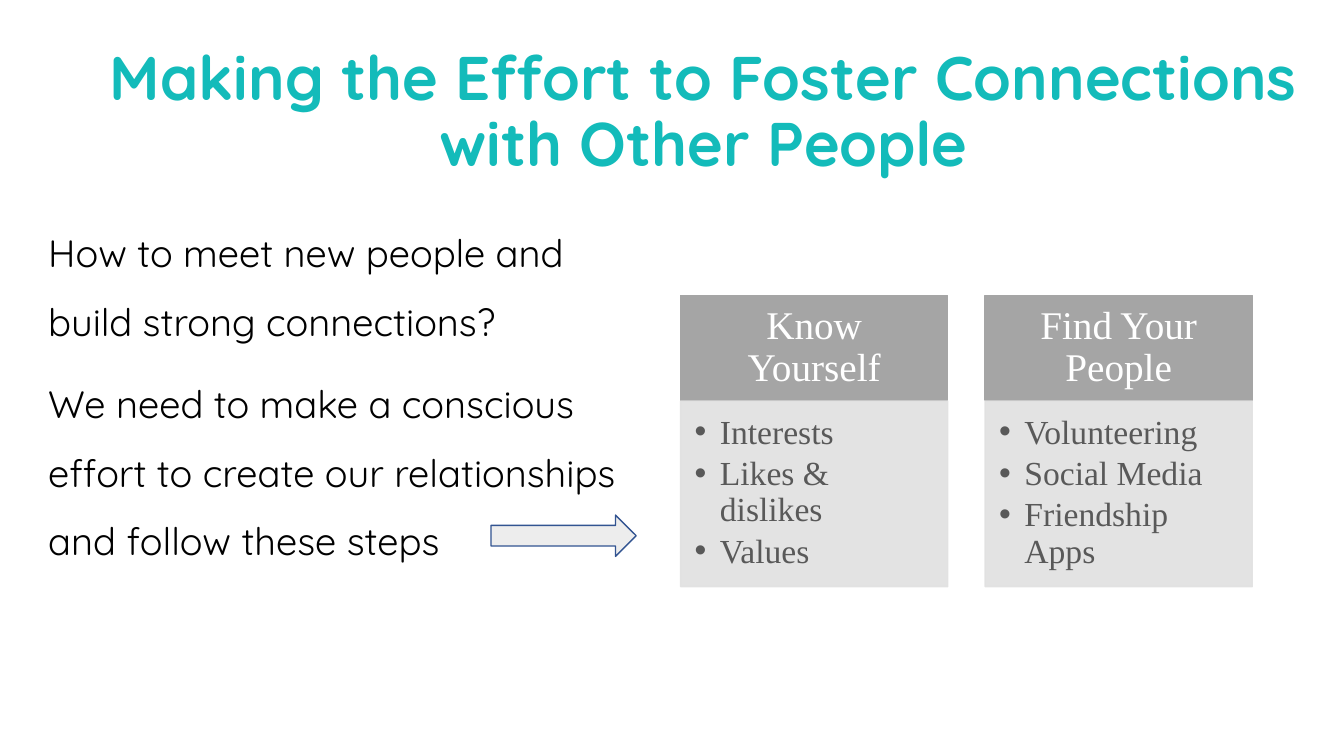
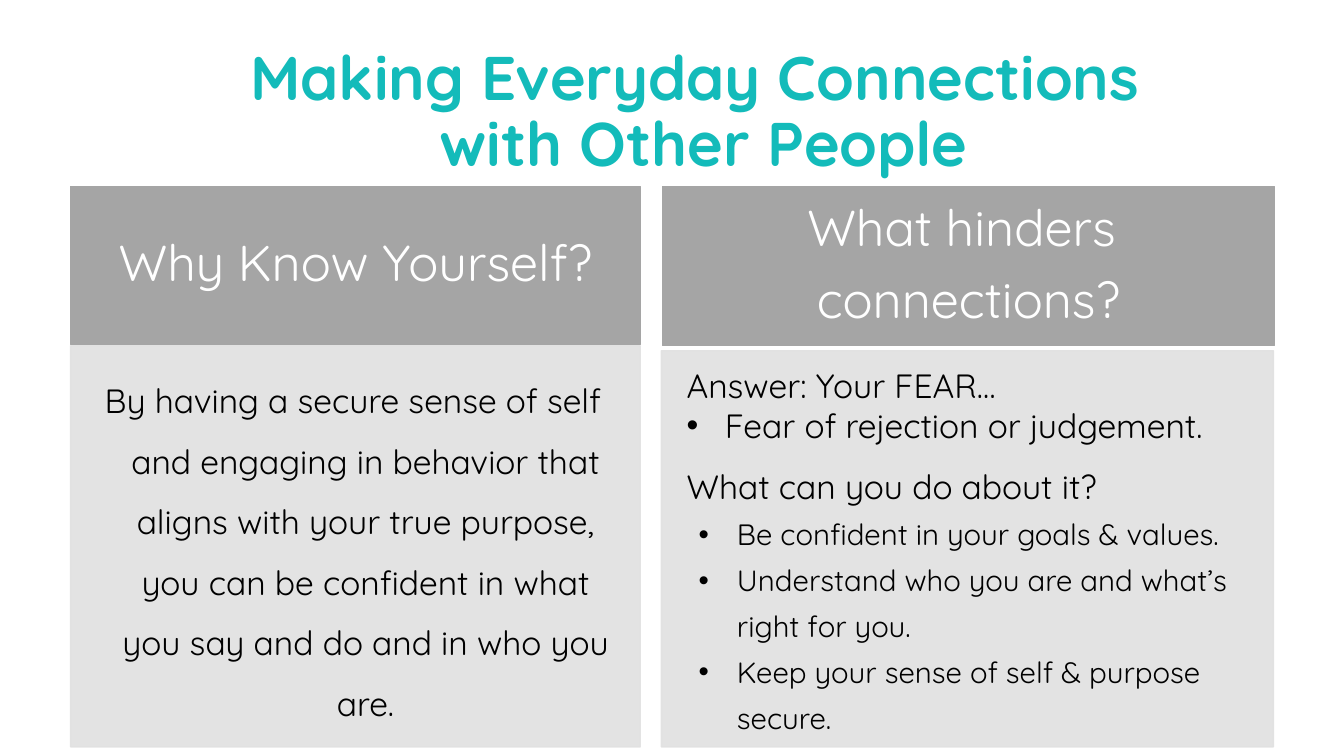
from dataclasses import dataclass, replace

from lxml import etree
from pptx import Presentation
from pptx.dml.color import RGBColor
from pptx.enum import shapes, text
from pptx.oxml.ns import qn
from pptx.util import Pt

PX = 9144
TEAL = RGBColor(0x13, 0xBB, 0xBA)
BLACK = RGBColor(0x00, 0x00, 0x00)
WHITE = RGBColor(0xFF, 0xFF, 0xFF)
HEADER_GREY = RGBColor(0xA5, 0xA5, 0xA5)
BODY_GREY = RGBColor(0xE1, 0xE1, 0xE1)
ARROW_GREY = RGBColor(0xED, 0xED, 0xED)
ARROW_BLUE = RGBColor(0x32, 0x54, 0x91)
TEXT_GREY = RGBColor(0x59, 0x59, 0x59)
LEFT, CENTER = text.PP_ALIGN.LEFT, text.PP_ALIGN.CENTER
TOP, MIDDLE = text.MSO_ANCHOR.TOP, text.MSO_ANCHOR.MIDDLE
SERIF = "Times New Roman"


@dataclass(frozen=True)
class Style:
    """Look of one paragraph; margin and indent in px, the rest in points."""
    size: float
    color: RGBColor = BLACK
    font: str = "Quicksand"
    bold: bool = False
    align: text.PP_ALIGN = LEFT
    spacing: float = 1.0
    before: float = 0
    after: float = 0
    margin: int = 0
    indent: int = 0
    bullet: bool = False


TITLE = Style(44, TEAL, bold=True, align=CENTER, spacing=0.9)
INTRO = Style(27.2, spacing=1.5, before=10)
HEADER = Style(36, WHITE, align=CENTER, spacing=0.9)
STEP_HEADER = replace(HEADER, size=28, font=SERIF)
STEP = Style(24, TEXT_GREY, SERIF, spacing=0.9, after=3.6, margin=25, indent=-25, bullet=True)
REASON = Style(24, align=CENTER, spacing=1.5, margin=25, indent=-25)
ANSWER = Style(24)
FEAR = replace(ANSWER, margin=38, indent=-38, bullet=True)
QUESTION = replace(ANSWER, before=14.4)
ADVICE = replace(FEAR, size=21, spacing=1.3, margin=50)


def px(*lengths):
    """Turn px lengths into EMU."""
    return [length * PX for length in lengths]


def write(frame, lines, anchor=TOP, insets=(10, 5, 10, 5)):
    """Fill a text frame with (wording, style) paragraphs."""
    frame.word_wrap = True
    frame.vertical_anchor = anchor
    frame.margin_left, frame.margin_top, frame.margin_right, frame.margin_bottom = px(*insets)
    for index, (wording, style) in enumerate(lines):
        paragraph = frame.add_paragraph() if index else frame.paragraphs[0]
        paragraph.text = wording
        properties = paragraph._p.get_or_add_pPr()
        properties.set("marL", str(style.margin * PX))
        properties.set("indent", str(style.indent * PX))
        if style.bullet:
            etree.SubElement(properties, qn("a:buFont"), typeface="Arial")
            etree.SubElement(properties, qn("a:buChar"), char="•")
        paragraph.alignment = style.align
        paragraph.line_spacing = style.spacing
        paragraph.space_before = Pt(style.before)
        paragraph.space_after = Pt(style.after)
        font = paragraph.font
        font.name, font.size, font.bold = style.font, Pt(style.size), style.bold
        font.color.rgb = style.color


def add_text(slide, box, lines, anchor=TOP):
    """Add a plain text box."""
    write(slide.shapes.add_textbox(*px(*box)).text_frame, lines, anchor)


def add_block(slide, kind, box, fill, line, alpha=100):
    """Add a filled preset shape with a thin outline."""
    block = slide.shapes.add_shape(kind, *px(*box))
    block.shadow.inherit = False
    block.fill.solid()
    block.fill.fore_color.rgb = fill
    block.line.color.rgb = line
    block.line.width = Pt(1)
    if alpha < 100:
        for color in block._element.spPr.iter(qn("a:srgbClr")):
            etree.SubElement(color, qn("a:alpha"), val=str(alpha * 1000))
    return block


def add_panel(slide, header_box, header, body_box, body, body_inset=14):
    """Add a dark header block above a pale body block."""
    rectangle = shapes.MSO_SHAPE.RECTANGLE
    head = add_block(slide, rectangle, header_box, HEADER_GREY, HEADER_GREY)
    write(head.text_frame, header, MIDDLE, (22, 12, 22, 12))
    base = add_block(slide, rectangle, body_box, BODY_GREY, BODY_GREY, alpha=90)
    write(base.text_frame, body, TOP, (body_inset, 14, 19, 21))


def add_titled_slide(deck, title):
    """Add a blank slide with the shared title."""
    slide = deck.slides.add_slide(deck.slide_layouts[6])
    add_text(slide, (92, 40, 1212, 145), [(title, TITLE)], MIDDLE)
    return slide


def build_steps(deck):
    """Build the slide on meeting people in two steps."""
    slide = add_titled_slide(deck, "Making the Effort to Foster Connections with Other People")
    add_text(slide, (38, 200, 620, 430), [
        ("How to meet new people and build strong connections?", INTRO),
        ("We need to make a conscious effort to create our relationships "
         "and follow these steps", INTRO),
    ])
    steps = [
        ("Know Yourself", ["Interests", "Likes & dislikes", "Values"]),
        ("Find Your People", ["Volunteering", "Social Media", "Friendship Apps"]),
    ]
    for index, (header, items) in enumerate(steps):
        left = 675 + index * 302
        add_panel(slide, (left, 293, 265, 104), [(header, STEP_HEADER)],
                  (left, 398, 265, 184), [(item, STEP) for item in items])
    add_block(slide, shapes.MSO_SHAPE.RIGHT_ARROW, (487, 511, 144, 41), ARROW_GREY, ARROW_BLUE)


def build_everyday(deck):
    """Build the slide on self-knowledge and what hinders connections."""
    slide = add_titled_slide(deck, "Making Everyday Connections \vwith Other People")
    add_panel(slide, (70, 185, 565, 157), [("Why Know Yourself?", HEADER)],
              (70, 343, 565, 398), [
        ("By having a secure sense of self and engaging in behavior that aligns with your "
         "true purpose, you can be confident in what you say and do and in who you are.", REASON),
    ])
    add_panel(slide, (657, 185, 607, 158), [
        ("What hinders ", replace(HEADER, after=12.6)),
        ("connections?", HEADER),
    ], (656, 348, 607, 393), [
        ("Answer: Your FEAR…", ANSWER),
        ("Fear of rejection or judgement.", FEAR),
        ("What can you do about it?", QUESTION),
        ("Be confident in your goals & values.", ADVICE),
        ("Understand who you are and what’s right for you.", ADVICE),
        ("Keep your sense of self & purpose secure.", ADVICE),
    ], body_inset=25)


def main():
    """Build and save the deck."""
    deck = Presentation()
    deck.slide_width, deck.slide_height = px(1333, 750)
    build_steps(deck)
    build_everyday(deck)
    deck.save("out.pptx")


if __name__ == "__main__":
    main()
